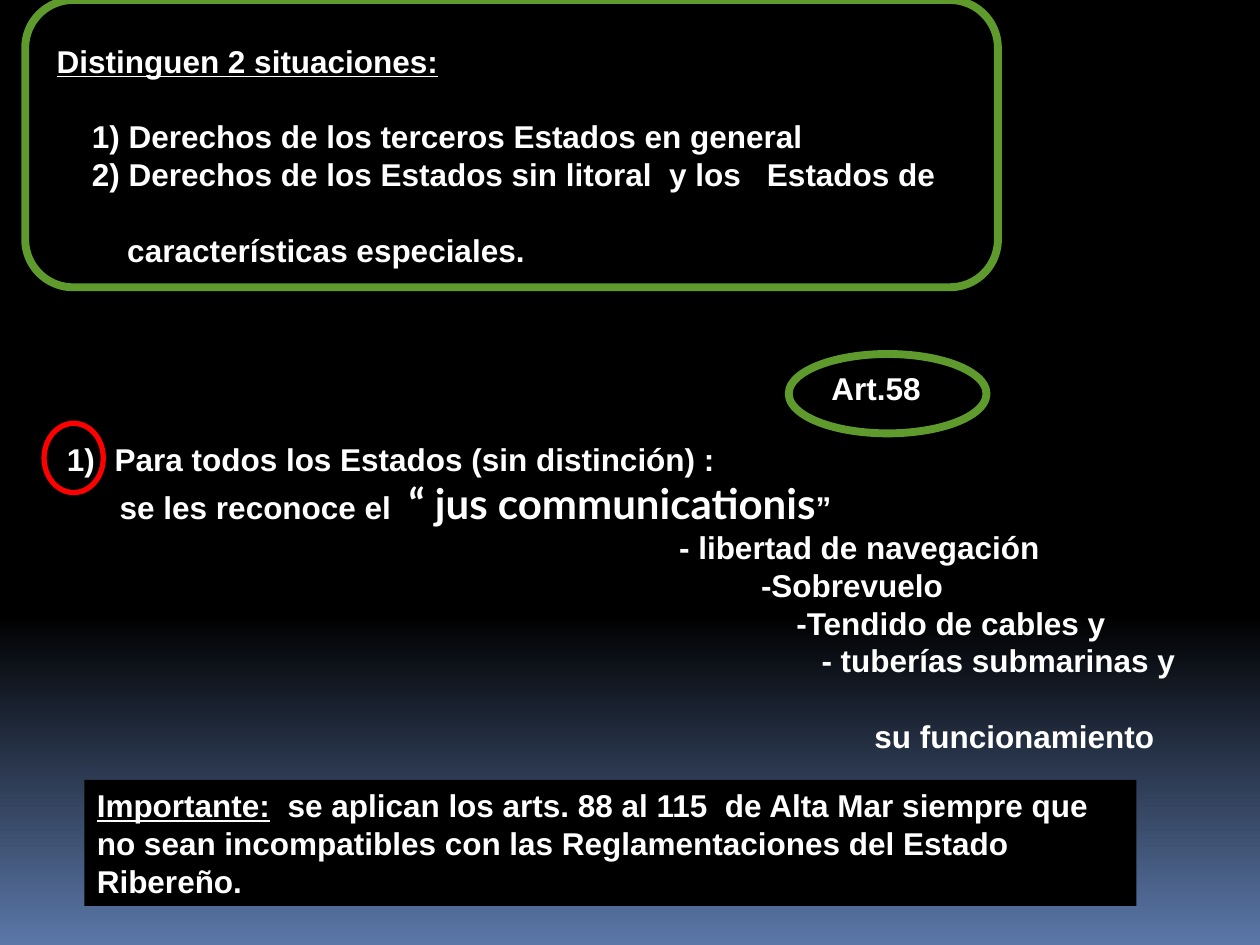
from lxml import etree
from pptx import Presentation
from pptx.dml.color import RGBColor
from pptx.enum.shapes import MSO_SHAPE
from pptx.enum.text import MSO_ANCHOR, PP_ALIGN
from pptx.oxml.ns import qn
from pptx.util import Inches, Pt

RECT, ROUND, OVAL = MSO_SHAPE.RECTANGLE, MSO_SHAPE.ROUNDED_RECTANGLE, MSO_SHAPE.OVAL
TOP, LEFT = MSO_ANCHOR.TOP, PP_ALIGN.LEFT
COLORS = {"text": "FFFFFF", "dark": "000000", "sky": "5B77A8", "green": "5E9B2C", "red": "FF0000"}
BLANK_LINE = 21.6


def color(name):
    """Return the named colour."""
    return RGBColor.from_string(COLORS[name])


def place(sp, box):
    """Move a shape to a box of left, top, width and height in inches."""
    sp.left, sp.top, sp.width, sp.height = map(Inches, box)


def prepare(sp):
    """Make the text frame of a shape wrap and start at its top."""
    tf = sp.text_frame
    tf.word_wrap = True
    tf.vertical_anchor = TOP
    return tf


def write(p, *texts, indent=0, before=0, number=False):
    """Fill a paragraph with bold white runs, indented and optionally numbered."""
    p.alignment = LEFT
    p.space_before = Pt(before)
    p.line_spacing = 1.0
    p.font.name, p.font.size, p.font.bold = "Arial", Pt(18), True
    p.font.color.rgb = color("text")
    pPr = p._p.get_or_add_pPr()
    pPr.set("marL", str(Inches(indent)))
    pPr.set("indent", str(-Inches(indent) if number else 0))
    bullet = etree.Element(qn("a:buAutoNum" if number else "a:buNone"))
    if number:
        bullet.set("type", "arabicParenR")
    pPr.find(qn("a:defRPr")).addprevious(bullet)
    runs = []
    for text in texts:
        r = p.add_run()
        r.text = text
        r.font.name, r.font.size, r.font.bold = "Arial", Pt(18), True
        r.font.color.rgb = color("text")
        runs.append(r)
    return runs


def write_lines(tf, lines):
    """Write one paragraph for each (text, indent, space before)."""
    for text, indent, before in lines:
        write(tf.add_paragraph(), text, indent=indent, before=before)


def add_outline(slide, kind, box, line, width):
    """Draw an unfilled outline."""
    sp = slide.shapes.add_shape(kind, *map(Inches, box))
    sp.shadow.inherit = False
    sp.fill.background()
    sp.line.color.rgb = color(line)
    sp.line.width = Pt(width)


def paint_background(slide):
    """Fade the background from black to blue."""
    fill = slide.background.fill
    fill.gradient()
    fill.gradient_angle = 270
    for stop, position, name in zip(fill.gradient_stops, (0.65, 1), ("dark", "sky")):
        stop.position = position
        stop.color.rgb = color(name)


def add_situations(slide, box):
    """Write the two situations in the title."""
    sp = slide.shapes.title
    place(sp, box)
    tf = prepare(sp)
    heading, = write(tf.paragraphs[0], "Distinguen 2 situaciones:")
    heading.font.underline = True
    write_lines(tf, [
        ("1) Derechos de los terceros Estados en general", 0.28, BLANK_LINE),
        ("2) Derechos de los Estados sin litoral  y los   Estados de", 0.28, 0),
        ("características especiales.", 0.56, BLANK_LINE),
    ])


def add_rights(slide, box):
    """List the rights of all states in the body."""
    sp = slide.placeholders[1]
    place(sp, box)
    tf = prepare(sp)
    write(tf.paragraphs[0], "Para todos los Estados (sin distinción) :", indent=0.38, number=True)
    runs = write(tf.add_paragraph(), "se les reconoce el  ", "“ jus communicationis", "”", indent=0.42)
    runs[1].font.name, runs[1].font.size = "Lato", Pt(24)
    write_lines(tf, [
        ("- libertad de navegación", 4.86, 0),
        ("-Sobrevuelo", 5.51, 0),
        ("-Tendido de cables y", 5.79, 0),
        ("- tuberías submarinas y", 5.99, 0),
        ("su funcionamiento", 6.41, BLANK_LINE),
    ])


def add_article(slide, box):
    """Write the article number."""
    sp = slide.shapes.add_textbox(*map(Inches, box))
    write(prepare(sp).paragraphs[0], "Art.58")


def add_note(slide, box):
    """Write the important note on a black panel."""
    sp = slide.shapes.add_shape(RECT, *map(Inches, box))
    sp.shadow.inherit = False
    sp.fill.solid()
    sp.fill.fore_color.rgb = color("dark")
    sp.line.fill.background()
    runs = write(prepare(sp).paragraphs[0], "Importante:",
                 "  se aplican los arts. 88 al 115  de Alta Mar siempre que no sean "
                 "incompatibles con las Reglamentaciones del Estado Ribereño.")
    runs[0].font.underline = True


def main():
    """Build the slide and save it."""
    prs = Presentation()
    prs.slide_width, prs.slide_height = Inches(10), Inches(7.5)
    slide = prs.slides.add_slide(prs.slide_layouts[1])
    paint_background(slide)
    add_situations(slide, (0.35, 0.28, 7.32, 1.9))
    add_rights(slide, (0.43, 3.44, 9.21, 2.62))
    add_article(slide, (6.5, 2.88, 2.44, 0.4))
    add_note(slide, (0.67, 6.19, 8.35, 1))
    add_outline(slide, ROUND, (0.2, 0, 7.72, 2.28), "green", 4.5)
    add_outline(slide, OVAL, (6.26, 2.81, 1.57, 0.63), "green", 4.5)
    add_outline(slide, OVAL, (0.35, 3.36, 0.47, 0.55), "red", 3)
    prs.save("out.pptx")


if __name__ == "__main__":
    main()
